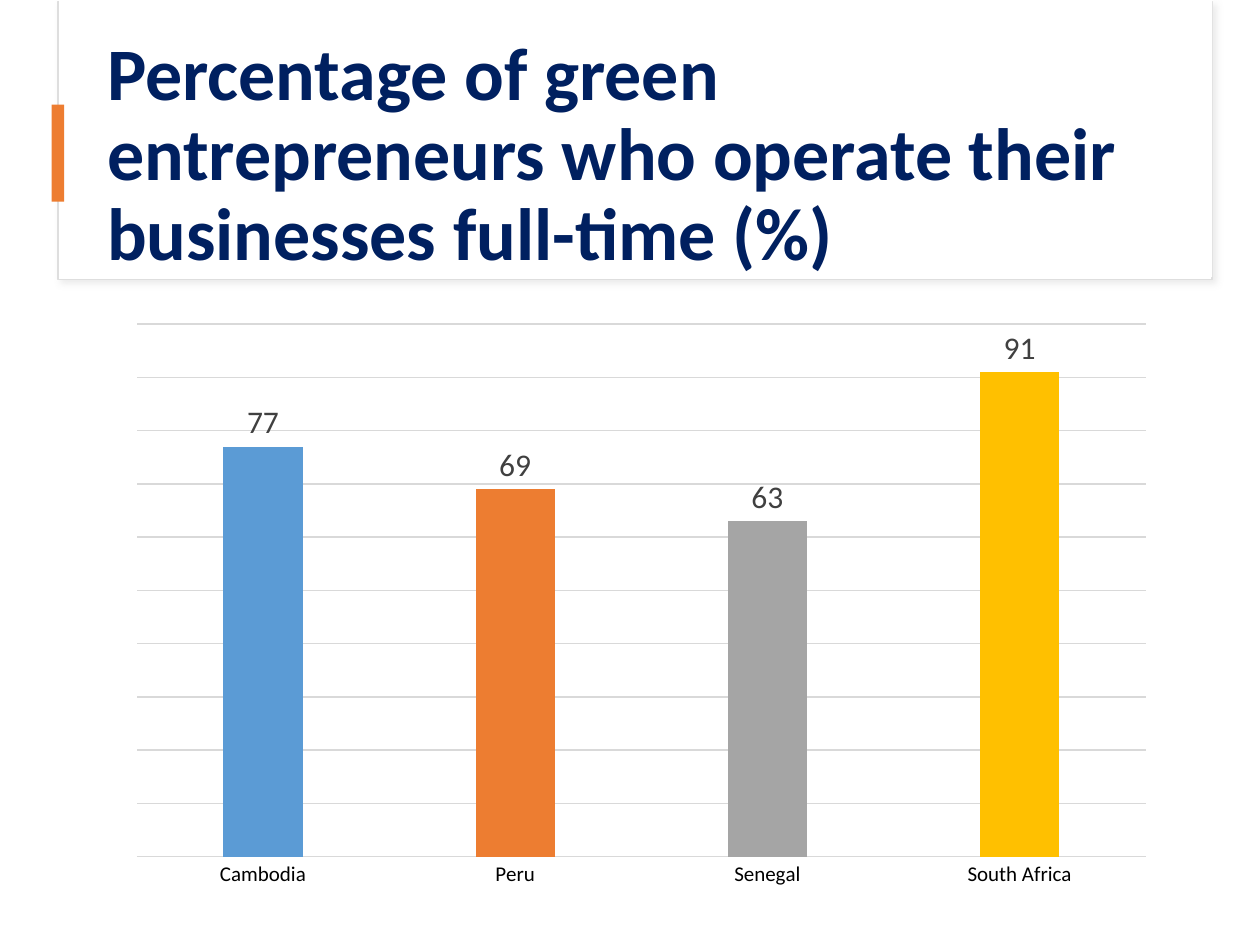
import lxml.etree
import pptx
import pptx.chart.data
import pptx.dml.color
import pptx.enum.chart
import pptx.enum.shapes
import pptx.enum.text
import pptx.oxml
import pptx.oxml.ns
import pptx.util

RGBColor = pptx.dml.color.RGBColor
WHITE = RGBColor(0xFF, 0xFF, 0xFF)
BLACK = RGBColor(0x00, 0x00, 0x00)
NAVY = RGBColor(0x00, 0x20, 0x60)
BLUE = RGBColor(0x5B, 0x9B, 0xD5)
ORANGE = RGBColor(0xED, 0x7D, 0x31)
GREY = RGBColor(0xA5, 0xA5, 0xA5)
GOLD = RGBColor(0xFF, 0xC0, 0x00)
LABEL_GREY = RGBColor(0x40, 0x40, 0x40)
BORDER_GREY = RGBColor(0xDE, 0xDE, 0xDE)
GRID_GREY = RGBColor(0xD9, 0xD9, 0xD9)
FONT = "Calibri"

deck = pptx.Presentation()
deck.slide_width = pptx.util.Inches(10)
deck.slide_height = pptx.util.Inches(7.5)
slide = deck.slides.add_slide(deck.slide_layouts[5])


def add_panel(left, top, width, height, fill):
    """Add a borderless rectangle, measured in inches."""
    panel = slide.shapes.add_shape(
        pptx.enum.shapes.MSO_SHAPE.RECTANGLE,
        *(pptx.util.Inches(length) for length in (left, top, width, height)))
    panel.shadow.inherit = False
    panel.fill.solid()
    panel.fill.fore_color.rgb = fill
    panel.line.fill.background()
    return panel


def style_font(font, size, color):
    font.name = FONT
    font.size = pptx.util.Pt(size)
    font.color.rgb = color


# Header card
add_panel(0, 0, 10, 7.5, WHITE)
card = add_panel(0.46, 0.01, 9.16, 2.21, WHITE)
card.line.color.rgb = BORDER_GREY
card.line.width = pptx.util.Pt(0.75)
effects = card._element.spPr.find(pptx.oxml.ns.qn("a:effectLst"))
effects.append(pptx.oxml.parse_xml(
    f'<a:outerShdw {pptx.oxml.ns.nsdecls("a")} blurRad="50800" dist="38100" '
    'dir="2700000" algn="tl" rotWithShape="0"><a:srgbClr val="D9D9D9">'
    '<a:alpha val="50000"/></a:srgbClr></a:outerShdw>'))
add_panel(0.47, 0, 9.15, 2.2, WHITE)

# Title, brought in front of the card
title = slide.shapes.title
slide.shapes._spTree.append(title._element)
title.left, title.top = pptx.util.Inches(0.75), pptx.util.Inches(0.6)
title.width, title.height = pptx.util.Inches(8.34), pptx.util.Inches(1.29)
title.text_frame.word_wrap = True
title.text_frame.auto_size = pptx.enum.text.MSO_AUTO_SIZE.NONE
title.text_frame.vertical_anchor = pptx.enum.text.MSO_ANCHOR.MIDDLE
heading = title.text_frame.paragraphs[0]
heading.alignment = pptx.enum.text.PP_ALIGN.LEFT
heading.line_spacing = 0.9
heading_run = heading.add_run()
heading_run.text = ("Percentage of green entrepreneurs who operate "
                    "their businesses full-time (%)")
style_font(heading_run.font, 42.3, NAVY)
heading_run.font.bold = True

add_panel(0.41, 0.83, 0.1, 0.77, ORANGE)

# Share of full-time green entrepreneurs by country
countries = [("Cambodia", 77, BLUE), ("Peru", 69, ORANGE),
             ("Senegal", 63, GREY), ("South Africa", 91, GOLD)]
shares = pptx.chart.data.CategoryChartData()
shares.categories = [country for country, _, _ in countries]
shares.add_series("Series 1", [share for _, share, _ in countries])
chart = slide.shapes.add_chart(
    pptx.enum.chart.XL_CHART_TYPE.COLUMN_CLUSTERED,
    pptx.util.Inches(0.92), pptx.util.Inches(2.48),
    pptx.util.Inches(8.34), pptx.util.Inches(4.65), shares).chart
chart.has_title = False
chart.has_legend = False
style_font(chart.font, 10, BLACK)

plot = chart.plots[0]
plot.gap_width = 219
plot.overlap = -27
plot.vary_by_categories = False
bars = plot.series[0]
for index, (_, _, color) in enumerate(countries):
    bar_fill = bars.points[index].format.fill
    bar_fill.solid()
    bar_fill.fore_color.rgb = color

labels = bars.data_labels
labels.show_value = True
labels.position = pptx.enum.chart.XL_LABEL_POSITION.OUTSIDE_END
style_font(labels.font, 18, LABEL_GREY)

country_axis = chart.category_axis
country_axis.major_tick_mark = pptx.enum.chart.XL_TICK_MARK.NONE
style_font(country_axis.tick_labels.font, 12, BLACK)

share_axis = chart.value_axis
share_axis.minimum_scale = 0
share_axis.maximum_scale = 100
share_axis.major_unit = 10
share_axis.major_tick_mark = pptx.enum.chart.XL_TICK_MARK.NONE
share_axis.tick_label_position = pptx.enum.chart.XL_TICK_LABEL_POSITION.NONE
share_axis.format.line.fill.background()
share_axis.has_major_gridlines = True

for rule in (country_axis.format.line, share_axis.major_gridlines.format.line):
    rule.color.rgb = GRID_GREY
    rule.width = pptx.util.Pt(0.75)

deck.save("out.pptx")
